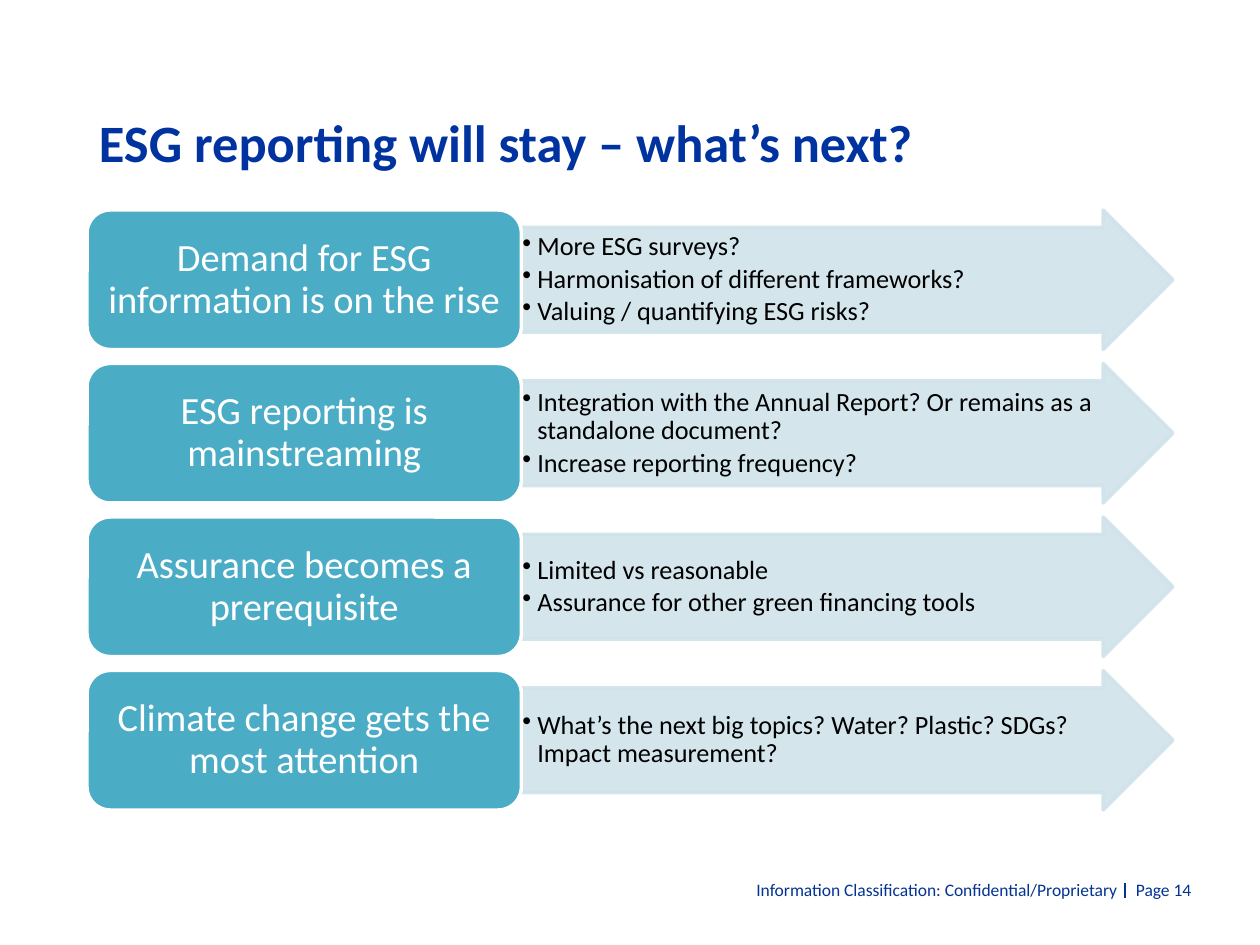
from lxml import etree
from pptx import Presentation
from pptx import util as u
from pptx.dml.color import RGBColor
from pptx.enum import shapes, text
from pptx.oxml import ns

PX = u.Inches(1) / 126
FONT = "Calibri"
NAVY, FOOTER_BLUE, TEAL, PALE = "0033A0", "043491", "4BACC6", "D0E3EA"
WHITE, BLACK = "FFFFFF", "000000"
ROWS = [
    ("Demand for ESG information is on the rise",
     ["More ESG surveys?", "Harmonisation of different frameworks?",
      "Valuing / quantifying ESG risks?"]),
    ("ESG reporting is mainstreaming",
     ["Integration with the Annual Report? Or remains as a standalone document?",
      "Increase reporting frequency?"]),
    ("Assurance becomes a prerequisite",
     ["Limited vs reasonable", "Assurance for other green financing tools"]),
    ("Climate change gets the most attention",
     ["What’s the next big topics? Water? Plastic? SDGs? Impact measurement?"]),
]


def px(length):
    """Turn px into EMU."""
    return u.Emu(round(length * PX))


def color(value):
    """Turn a hex string into a colour."""
    return RGBColor.from_string(value)


def add_bullet(para, indent):
    """Give a paragraph a hanging round bullet."""
    para.level = 1
    props = para._p.get_or_add_pPr()
    props.set("marL", str(px(indent)))
    props.set("indent", str(-px(indent)))
    etree.SubElement(props, ns.qn("a:buChar")).set("char", "•")


def add_text(page, box, lines, *, size, fill, bold=False, align=text.PP_ALIGN.LEFT,
             anchor=text.MSO_ANCHOR.MIDDLE, inset=(12, 6), wrap=True,
             spacing=None, after=None, indent=None):
    """Write lines as paragraphs in a text box."""
    frame = page.shapes.add_textbox(*map(px, box)).text_frame
    frame.word_wrap = wrap
    frame.vertical_anchor = anchor
    frame.margin_left = frame.margin_right = px(inset[0])
    frame.margin_top = frame.margin_bottom = px(inset[1])
    for index, line in enumerate(lines):
        para = frame.paragraphs[0] if index == 0 else frame.add_paragraph()
        para.alignment = align
        if spacing:
            para.line_spacing = spacing
        if after:
            para.space_after = u.Pt(after)
        if indent:
            add_bullet(para, indent)
        span = para.add_run()
        span.text = line
        span.font.name = FONT
        span.font.size = u.Pt(size)
        span.font.bold = bold
        span.font.color.rgb = color(fill)


def add_block(page, kind, box, fill, line, opacity=100):
    """Draw a filled preset shape with a 2 pt outline."""
    shape = page.shapes.add_shape(kind, *map(px, box))
    shape.shadow.inherit = False
    shape.fill.solid()
    shape.fill.fore_color.rgb = color(fill)
    shape.line.color.rgb = color(line)
    shape.line.width = u.Pt(2)
    if opacity < 100:
        for tint in shape.element.spPr.iter(ns.qn("a:srgbClr")):
            etree.SubElement(tint, ns.qn("a:alpha")).set("val", str(opacity * 1000))
    return shape


def add_row(page, box, heading, points):
    """Place a heading block and the arrow with its points."""
    left, top, width, height = box
    split = width * 0.4
    arrow_left, arrow_width = left + split, width - split
    arrow = add_block(page, shapes.MSO_SHAPE.RIGHT_ARROW,
                      (arrow_left, top, arrow_width, height), PALE, PALE, 90)
    arrow.adjustments[0], arrow.adjustments[1] = 0.75, 0.5
    add_text(page, (arrow_left, top + height / 8, arrow_width - height * 3 / 8, height * 3 / 4),
             points, size=15, fill=BLACK, inset=(1, 1), spacing=0.9, after=2.25, indent=15)
    add_block(page, shapes.MSO_SHAPE.ROUNDED_RECTANGLE, (left, top, split, height), TEAL, WHITE)
    add_text(page, (left + 7, top + 7, split - 14, height - 14), [heading], size=22,
             fill=WHITE, align=text.PP_ALIGN.CENTER, spacing=0.9, after=7.7)


def add_rows(page, box):
    """Stack the rows with gaps of a tenth of a row."""
    left, top, width, height = box
    row_height = height / (len(ROWS) * 1.1 - 0.1)
    for index, (heading, points) in enumerate(ROWS):
        row_top = top + index * row_height * 1.1
        add_row(page, (left, row_top, width, row_height), heading, points)


def add_footer(page, box):
    """Place the classification, divider and page number."""
    left, top, width, height = box
    style = dict(size=10, fill=FOOTER_BLUE, wrap=False, anchor=text.MSO_ANCHOR.TOP)
    add_text(page, (left, top, 392, height),
             ["Information Classification: Confidential/Proprietary"],
             align=text.PP_ALIGN.RIGHT, **style)
    divider = page.shapes.add_connector(shapes.MSO_CONNECTOR.STRAIGHT, px(left + 388),
                                        px(top + 10), px(left + 388), px(top + 25))
    divider.line.color.rgb = color(FOOTER_BLUE)
    divider.line.width = u.Pt(0.75)
    etree.SubElement(divider.element.spPr, ns.qn("a:effectLst"))
    add_text(page, (left + 387, top, width - 387, height), ["Page 14"], **style)


def main():
    """Build and save the slide."""
    deck = Presentation()
    deck.slide_width, deck.slide_height = px(1260), px(945)
    page = deck.slides.add_slide(deck.slide_layouts[6])
    add_footer(page, (737, 873, 471, 34))
    add_text(page, (87, 50, 1086, 183), ["ESG reporting will stay – what’s next?"],
             size=30, fill=NAVY, bold=True)
    add_rows(page, (87, 210, 1086, 600))
    deck.save("out.pptx")


if __name__ == "__main__":
    main()
